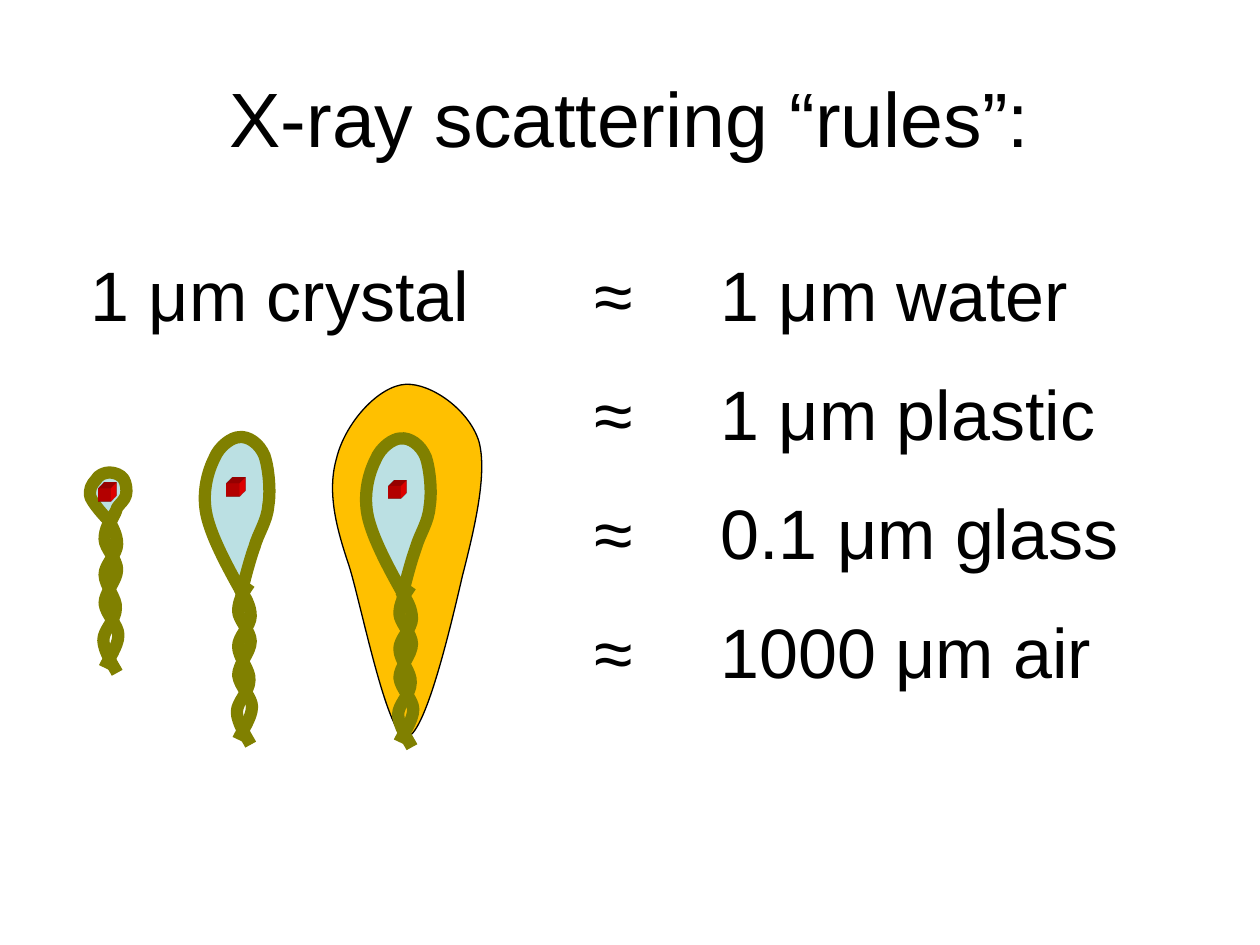
from dataclasses import dataclass

from lxml.etree import SubElement
from pptx import Presentation
from pptx.dml.color import RGBColor as RGB
from pptx.enum.shapes import MSO_SHAPE as SHAPE
from pptx.enum.text import MSO_ANCHOR as ANCHOR, MSO_AUTO_SIZE as AUTO_SIZE, PP_ALIGN as ALIGN
from pptx.oxml.ns import qn
from pptx.util import Inches, Pt


@dataclass(frozen=True)
class Theme:
    font: str = "Arial"
    title_size: float = 44
    body_size: float = 40
    text: RGB = RGB(0, 0, 0)
    solvent: RGB = RGB(0xBB, 0xE0, 0xE3)
    fiber: RGB = RGB(0x80, 0x80, 0x00)
    crystal: RGB = RGB(0xFF, 0x00, 0x00)
    drop: RGB = RGB(0xFF, 0xC0, 0x00)
    fiber_width: float = 7
    outline_width: float = 0.75


# Each curve is a start point followed by three points per Bezier segment.
LARGE_LOOP = [
    (1.94, 4.74), (1.81, 4.51), (1.68, 4.27), (1.64, 4.09),
    (1.60, 3.91), (1.65, 3.74), (1.70, 3.64), (1.74, 3.54), (1.84, 3.47), (1.90, 3.47),
    (1.97, 3.46), (2.06, 3.52), (2.10, 3.62), (2.13, 3.71), (2.15, 3.89), (2.13, 4.01),
    (2.12, 4.14), (2.05, 4.23), (2.02, 4.34), (1.98, 4.45), (1.94, 4.61), (1.92, 4.69),
    (1.91, 4.76), (1.92, 4.78), (1.92, 4.79)]
SMALL_LOOP = [
    (0.89, 4.16), (0.82, 4.09), (0.75, 4.01), (0.72, 3.95),
    (0.70, 3.89), (0.73, 3.84), (0.76, 3.81), (0.78, 3.77), (0.83, 3.75), (0.87, 3.75),
    (0.91, 3.75), (0.96, 3.77), (0.98, 3.80), (1.00, 3.83), (1.01, 3.89), (1.00, 3.93),
    (0.99, 3.97), (0.95, 4.00), (0.93, 4.03), (0.92, 4.07), (0.89, 4.12), (0.88, 4.14),
    (0.87, 4.17), (0.88, 4.17), (0.88, 4.18)]
STRANDS = [
    [(1.90, 4.67), (1.95, 4.74), (1.99, 4.81), (1.99, 4.89),
     (1.99, 4.97), (1.89, 5.05), (1.89, 5.13), (1.89, 5.22), (1.99, 5.32), (1.98, 5.40),
     (1.98, 5.49), (1.88, 5.57), (1.88, 5.65), (1.88, 5.74), (1.97, 5.87), (1.99, 5.91)],
    [(1.98, 4.63), (1.93, 4.70), (1.89, 4.77), (1.89, 4.85),
     (1.89, 4.92), (1.99, 5.01), (1.99, 5.09), (1.99, 5.18), (1.89, 5.27), (1.89, 5.36),
     (1.90, 5.45), (2.00, 5.53), (2.00, 5.61), (2.00, 5.70), (1.91, 5.82), (1.89, 5.87)]]
DROP = [
    (3.67, 4.57), (3.77, 4.18), (3.87, 3.75), (3.80, 3.50),
    (3.72, 3.25), (3.42, 3.04), (3.22, 3.05), (3.01, 3.06), (2.74, 3.35), (2.67, 3.64),
    (2.59, 3.92), (2.68, 4.22), (2.77, 4.49), (2.86, 4.77), (3.07, 5.84), (3.22, 5.85),
    (3.37, 5.86), (3.58, 4.96), (3.67, 4.57)]


def shift(points, dx, dy):
    return [(x + dx, y + dy) for x, y in points]


def bend(sp):
    """Turn every three line segments of a freeform into one cubic Bezier segment."""
    lines = list(sp._element.iter(qn("a:lnTo")))
    for first, second, third in zip(*[iter(lines)] * 3):
        first.tag = qn("a:cubicBezTo")
        for line in (second, third):
            first.append(line[0])
            line.getparent().remove(line)


def extrude(sp, color, depth):
    """Give a flat shape an oblique solid body towards the top right."""
    sp_pr = sp._element.spPr
    scene = SubElement(sp_pr, qn("a:scene3d"))
    SubElement(scene, qn("a:camera"), prst="legacyObliqueTopRight")
    SubElement(scene, qn("a:lightRig"), rig="legacyFlat3", dir="b")
    body = SubElement(sp_pr, qn("a:sp3d"), extrusionH=str(Inches(depth)),
                      prstMaterial="legacyMatte")
    extrusion = SubElement(body, qn("a:extrusionClr"))
    SubElement(extrusion, qn("a:srgbClr"), val=str(color))


class SlideBuilder:
    def __init__(self, prs, theme):
        self.theme = theme
        self.slide = prs.slides.add_slide(prs.slide_layouts[5])

    def run(self, p, text, size):
        r = p.add_run()
        r.text = text
        r.font.name, r.font.size = self.theme.font, Pt(size)
        r.font.color.rgb = self.theme.text

    def title(self, text, *box):
        sp = self.slide.shapes.title
        sp.left, sp.top, sp.width, sp.height = map(Inches, box)
        tf = sp.text_frame
        tf.vertical_anchor = ANCHOR.MIDDLE
        p = tf.paragraphs[0]
        p.alignment = ALIGN.CENTER
        self.run(p, text, self.theme.title_size)

    def tabbed_text(self, rows, tabs, gap, *box):
        tf = self.slide.shapes.add_textbox(*map(Inches, box)).text_frame
        tf.word_wrap = True
        tf.auto_size = AUTO_SIZE.SHAPE_TO_FIT_TEXT
        for i, row in enumerate(rows):
            p = tf.add_paragraph() if i else tf.paragraphs[0]
            p.space_before = Pt(gap if i else 0)
            tab_list = SubElement(p._p.get_or_add_pPr(), qn("a:tabLst"))
            for pos in tabs:
                SubElement(tab_list, qn("a:tab"), pos=str(Inches(pos)), algn="l")
            self.run(p, "\t".join(row), self.theme.body_size)

    def curve(self, group, points, color, width, fill=None, close=False):
        start, *rest = [(Inches(x), Inches(y)) for x, y in points]
        builder = group.shapes.build_freeform(*start)
        builder.add_line_segments(rest, close=close)
        sp = builder.convert_to_shape()
        bend(sp)
        sp.shadow.inherit = False
        sp.line.color.rgb, sp.line.width = color, Pt(width)
        if fill is None:
            sp.fill.background()
        else:
            sp.fill.solid()
            sp.fill.fore_color.rgb = fill

    def crystal(self, group, x, y):
        sp = group.shapes.add_shape(SHAPE.RECTANGLE, *map(Inches, (x, y, 0.1, 0.1)))
        sp.rotation = 90
        sp.shadow.inherit = False
        sp.fill.solid()
        sp.fill.fore_color.rgb = self.theme.crystal
        sp.line.fill.background()
        extrude(sp, self.theme.crystal, 0.13)

    def mounted_loop(self, loop, crystal_at, strand_shift, drop=None):
        """Draw a crystal in a fiber loop on a twisted stem, optionally inside a drop."""
        th = self.theme
        group = self.slide.shapes.add_group_shape()
        if drop:
            self.curve(group, drop, th.text, th.outline_width, th.drop, close=True)
        self.curve(group, loop, th.fiber, th.fiber_width, th.solvent)
        self.crystal(group, *crystal_at)
        for strand in STRANDS:
            self.curve(group, shift(strand, *strand_shift), th.fiber, th.fiber_width)


def main():
    prs = Presentation()
    prs.slide_width, prs.slide_height = Inches(10), Inches(7.5)
    s = SlideBuilder(prs, Theme())
    s.title("X-ray scattering “rules”:", 0.5, 0.3, 9, 1.25)
    materials = ["1 μm water", "1 μm plastic", "0.1 μm glass", "1000 μm air"]
    rows = [("" if i else "1 μm crystal", "≈ ", material)
            for i, material in enumerate(materials)]
    s.tabbed_text(rows, (4, 5), 20, 0.62, 1.95, 8.62, 3.77)
    s.mounted_loop(LARGE_LOOP, (1.8, 3.84), (0, 0))
    s.mounted_loop(shift(LARGE_LOOP, 1.28, 0.01), (3.08, 3.86), (1.28, 0.02), DROP)
    s.mounted_loop(SMALL_LOOP, (0.78, 3.88), (-1.06, -0.57))
    prs.save("out.pptx")


if __name__ == "__main__":
    main()
